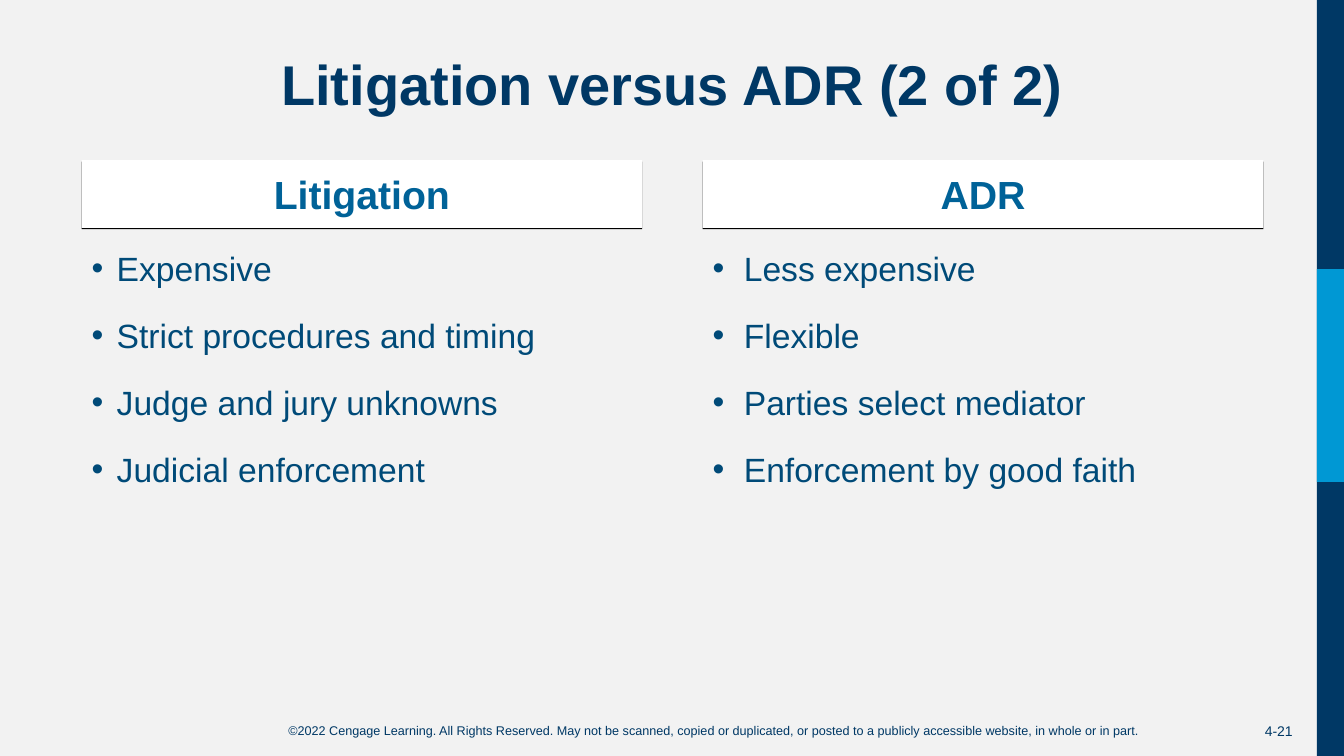
"""Build a slide comparing litigation with ADR in two bulleted columns."""
from lxml import etree
from pptx import Presentation, util as u
from pptx.dml.color import RGBColor
from pptx.enum import shapes, text
from pptx.oxml import ns

NAVY, SKY, BLUE, TEAL = "003865", "0098D4", "006298", "004A78"
WHITE, GREY, BLACK = "FFFFFF", "F2F2F2", "000000"
LEFT, CENTER, RIGHT = text.PP_ALIGN.LEFT, text.PP_ALIGN.CENTER, text.PP_ALIGN.RIGHT
TOP, MIDDLE, BOTTOM = text.MSO_ANCHOR.TOP, text.MSO_ANCHOR.MIDDLE, text.MSO_ANCHOR.BOTTOM


def rgb(value):
    return RGBColor.from_string(value)


def sub(parent, tag, **attrs):
    return etree.SubElement(parent, ns.qn(tag), attrs)


class Deck:
    font = "Arial"

    def __init__(self, prs):
        self.s = prs.slides.add_slide(prs.slide_layouts[5])
        fill = self.s.background.fill
        fill.solid()
        fill.fore_color.rgb = rgb(GREY)

    def fill_text(self, sp, lines, size, color, bold=False, align=LEFT, anchor=TOP):
        tf = sp.text_frame
        tf.word_wrap = True
        tf.auto_size = text.MSO_AUTO_SIZE.NONE
        tf.vertical_anchor = anchor
        tf.text = "\n".join(lines)
        for p in tf.paragraphs:
            p.alignment = align
            for r in p.runs:
                r.font.name, r.font.size, r.font.bold = self.font, u.Pt(size), bold
                r.font.color.rgb = rgb(color)
        return tf

    def title(self, words, x, y, w, h):
        sp = self.s.shapes.title
        sp.left, sp.top, sp.width, sp.height = map(u.Inches, (x, y, w, h))
        tf = self.fill_text(sp, [words], 40, NAVY, True, CENTER)
        tf.paragraphs[0].line_spacing = 0.9

    def text(self, lines, x, y, w, h, size, color, **style):
        sp = self.s.shapes.add_textbox(*map(u.Inches, (x, y, w, h)))
        return self.fill_text(sp, lines, size, color, **style)

    def rect(self, x, y, w, h, color):
        sp = self.s.shapes.add_shape(shapes.MSO_SHAPE.RECTANGLE, *map(u.Inches, (x, y, w, h)))
        sp.shadow.inherit = False
        sp.fill.solid()
        sp.fill.fore_color.rgb = rgb(color)
        sp.line.fill.background()
        return sp

    def header(self, words, x, y, w, h):
        sp = self.rect(x, y, w, h, WHITE)
        effects = sp._element.spPr.find(ns.qn("a:effectLst"))
        shadow = sub(effects, "a:outerShdw", dist=str(u.Pt(1)), dir="5400000", algn="t", rotWithShape="0")
        sub(shadow, "a:srgbClr", val=BLACK)
        tf = self.fill_text(sp, [words], 28, BLUE, True, CENTER, BOTTOM)
        tf.margin_top = tf.margin_bottom = u.Inches(0.1)
        tf.paragraphs[0].space_after = u.Pt(8)

    def bullets(self, items, x, y, w, h, indent):
        tf = self.text(items, x, y, w, h, 24, TEAL)
        for i, p in enumerate(tf.paragraphs):
            p.space_before, p.space_after = u.Pt(10 if i else 0), u.Pt(9)
            pPr = p._p.get_or_add_pPr()
            pPr.set("marL", str(u.Inches(indent)))
            pPr.set("indent", str(-u.Inches(indent)))
            sub(sub(pPr, "a:buClr"), "a:srgbClr", val=TEAL)
            sub(pPr, "a:buFont", typeface=self.font)
            sub(pPr, "a:buChar", char="•")


def main():
    prs = Presentation()
    prs.slide_width, prs.slide_height = u.Inches(13.33), u.Inches(7.5)
    deck = Deck(prs)
    deck.text(
        ["©2022 Cengage Learning. All Rights Reserved. May not be scanned, copied or duplicated, "
         "or posted to a publicly accessible website, in whole or in part."],
        1.82, 7.12, 10.51, 0.25, 9, NAVY, align=CENTER)
    deck.rect(13.06, 0, 0.28, 7.5, NAVY)
    deck.rect(13.06, 2.67, 0.28, 2.11, SKY)
    deck.text(["4-21"], 12.12, 7.05, 0.8, 0.4, 10, NAVY, align=RIGHT, anchor=MIDDLE)
    deck.title("Litigation versus ADR (2 of 2)", 0.52, 0.52, 12.29, 1.33)
    columns = [
        ("Litigation", 0.25, ["Expensive", "Strict procedures and timing",
                              "Judge and jury unknowns", "Judicial enforcement"]),
        ("ADR", 0.31, ["Less expensive", "Flexible",
                       "Parties select mediator", "Enforcement by good faith"]),
    ]
    for i, (heading, indent, items) in enumerate(columns):
        x = 0.81 + 6.16 * i
        deck.header(heading, x, 1.59, 5.56, 0.67)
        deck.bullets(items, x, 2.41, 5.56, 4.32, indent)
    prs.save("out.pptx")


if __name__ == "__main__":
    main()
